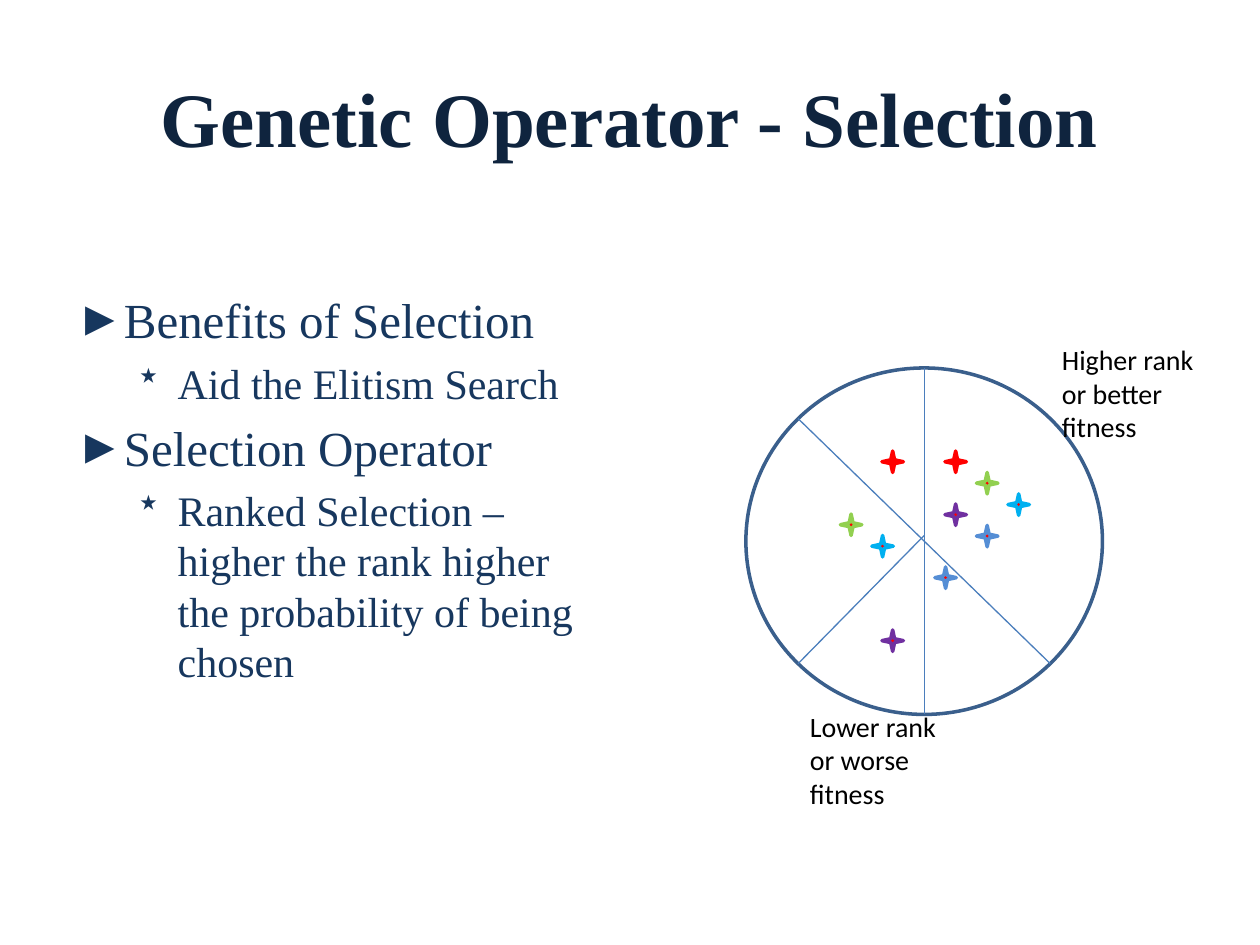
from dataclasses import dataclass
from math import cos, radians, sin

from lxml.etree import SubElement
from pptx import Presentation
from pptx.dml.color import RGBColor
from pptx.enum.shapes import MSO_CONNECTOR as Connector, MSO_SHAPE as Shape
from pptx.enum.text import MSO_ANCHOR as Anchor, MSO_AUTO_SIZE as AutoSize, PP_ALIGN as Align
from pptx.oxml.ns import qn
from pptx.util import Inches, Pt


@dataclass(frozen=True)
class Theme:
    serif: str = "Times New Roman"
    sans: str = "Calibri"
    title: str = "0F243E"
    body: str = "17375E"
    label: str = "000000"
    rim: str = "3A5F8C"
    spoke: str = "4B7EBC"
    red: str = "FF0000"
    green: str = "92D050"
    blue: str = "558ED5"
    purple: str = "7030A0"
    cyan: str = "00B0F0"
    title_size: int = 44
    body_sizes: tuple = (28, 24)
    label_size: int = 16
    heavy_line: float = 2
    thin_line: float = 0.75


THEME = Theme()
# Bullet character, left margin and hanging indent for each list level
BULLETS = (("►", 0.38, 0.38), ("٭", 0.81, 0.31))
BENEFITS = (
    (0, "Benefits of Selection"),
    (1, "Aid the Elitism Search"),
    (0, "Selection Operator"),
    (1, "Ranked Selection – higher the rank higher the probability of being chosen"),
)
STAR_SIZE = 0.17
# Left and top of each individual, measured from the wheel's box, and its colour
INDIVIDUALS = (
    (1.08, 0.66, THEME.red), (1.58, 0.66, THEME.red),
    (1.83, 0.83, THEME.green), (0.75, 1.16, THEME.green),
    (1.5, 1.58, THEME.blue), (1.83, 1.25, THEME.blue),
    (1.58, 1.08, THEME.purple), (1.08, 2.08, THEME.purple),
    (2.08, 1.0, THEME.cyan), (1.0, 1.33, THEME.cyan),
)


def write(para, text, *, font, size, color, bold=False, align=None):
    span = para.add_run()
    span.text = text
    span.font.name = font
    span.font.size = Pt(size)
    span.font.bold = bold
    span.font.color.rgb = RGBColor.from_string(color)
    if align is not None:
        para.alignment = align


def place(shape, left, top, width, height):
    shape.left, shape.top = Inches(left), Inches(top)
    shape.width, shape.height = Inches(width), Inches(height)


def outline(shape, color, width):
    shape.line.color.rgb = RGBColor.from_string(color)
    shape.line.width = Pt(width)


def set_bullet(para, level):
    mark, margin, hanging = BULLETS[level]
    para.level = level
    props = para._p.get_or_add_pPr()
    props.set("marL", str(Inches(margin)))
    props.set("indent", str(-Inches(hanging)))
    SubElement(props, qn("a:buFont"), typeface=THEME.serif)
    SubElement(props, qn("a:buChar"), char=mark)


def add_title(page, box, text):
    title = page.shapes.title
    place(title, *box)
    title.text_frame.vertical_anchor = Anchor.MIDDLE
    title.text_frame.auto_size = AutoSize.NONE
    write(title.text_frame.paragraphs[0], text, font=THEME.serif, size=THEME.title_size,
          color=THEME.title, bold=True, align=Align.CENTER)


def add_list(page, box, items):
    body = page.placeholders[1]
    place(body, *box)
    frame = body.text_frame
    frame.auto_size = AutoSize.NONE
    for index, (level, text) in enumerate(items):
        para = frame.add_paragraph() if index else frame.paragraphs[0]
        set_bullet(para, level)
        write(para, text, font=THEME.serif, size=THEME.body_sizes[level], color=THEME.body)
    frame.paragraphs[0].space_before = Pt(0)


def add_spoke(group, start, end):
    spoke = group.shapes.add_connector(Connector.STRAIGHT, *map(Inches, start + end))
    outline(spoke, THEME.spoke, THEME.thin_line)
    SubElement(spoke._element.spPr, qn("a:effectLst"))


def add_wheel(page, box):
    """Draw the roulette wheel: a rim cut by spokes at fixed angles."""
    left, top, width, height = box
    center = (left + width / 2, top + height / 2)

    def on_rim(degrees):
        angle = radians(degrees)
        return (center[0] + width / 2 * cos(angle), center[1] + height / 2 * sin(angle))

    group = page.shapes.add_group_shape()
    rim = group.shapes.add_shape(Shape.OVAL, *map(Inches, box))
    rim.shadow.inherit = False
    rim.fill.background()
    outline(rim, THEME.rim, THEME.heavy_line)
    add_spoke(group, on_rim(-90), on_rim(90))
    add_spoke(group, on_rim(-135), on_rim(45))
    add_spoke(group, on_rim(135), (center[0], top + 1.33))


def add_individuals(page, box):
    for x, y, color in INDIVIDUALS:
        star = page.shapes.add_shape(Shape.STAR_4_POINT, Inches(box[0] + x), Inches(box[1] + y),
                                     Inches(STAR_SIZE), Inches(STAR_SIZE))
        star.shadow.inherit = False
        star.fill.solid()
        star.fill.fore_color.rgb = RGBColor.from_string(THEME.red)
        outline(star, color, THEME.heavy_line)


def add_label(page, box, text):
    label = page.shapes.add_textbox(*map(Inches, box))
    label.text_frame.word_wrap = True
    label.text_frame.auto_size = AutoSize.SHAPE_TO_FIT_TEXT
    write(label.text_frame.paragraphs[0], text, font=THEME.sans, size=THEME.label_size,
          color=THEME.label)


def add_selection_diagram(page, box):
    left, top, _, height = box
    add_wheel(page, box)
    add_individuals(page, box)
    add_label(page, (left + 2.41, top - 0.25, 1.25, 0.91), "Higher rank or better fitness")
    add_label(page, (left + 0.41, top + height - 0.09, 1.25, 0.91), "Lower rank or worse fitness")


def main():
    deck = Presentation()
    deck.slide_width, deck.slide_height = Inches(10), Inches(7.5)
    page = deck.slides.add_slide(deck.slide_layouts[1])
    add_title(page, (0.5, 0.3, 9, 1.25), "Genetic Operator - Selection")
    add_list(page, (0.5, 2.25, 4.42, 4.95), BENEFITS)
    add_selection_diagram(page, (5.92, 2.92, 2.83, 2.75))
    deck.save("out.pptx")


if __name__ == "__main__":
    main()
